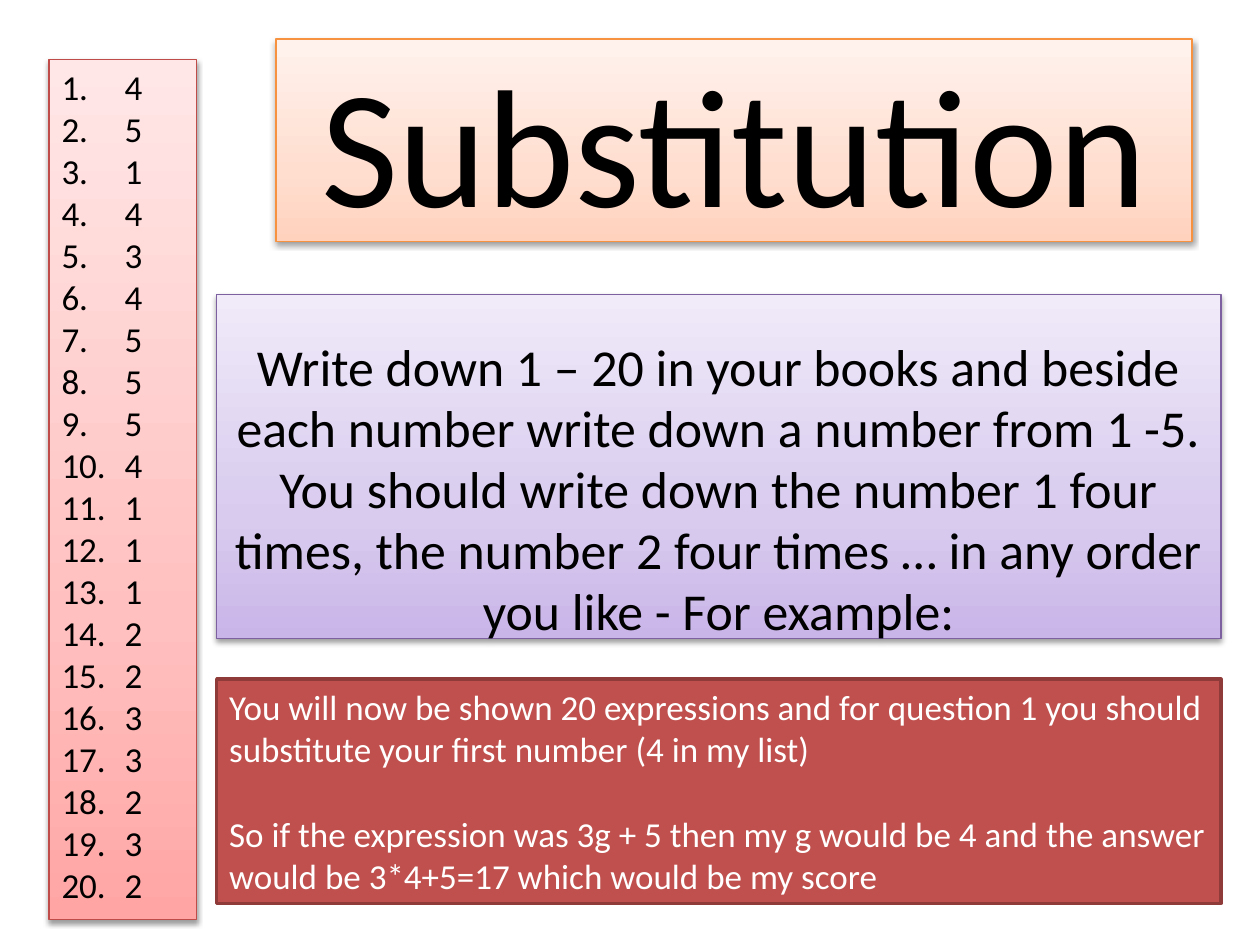
from copy import deepcopy

from lxml import etree
from pptx import Presentation
from pptx import util as u
from pptx.dml.color import RGBColor
from pptx.enum import shapes, text
from pptx.oxml import parse_xml
from pptx.oxml.ns import nsdecls, qn

BLACK = RGBColor(0x00, 0x00, 0x00)
WHITE = RGBColor(0xFF, 0xFF, 0xFF)
RED = RGBColor(0xC0, 0x50, 0x4D)
RED_EDGE = RGBColor(0x8E, 0x3B, 0x39)
ORANGE_EDGE = RGBColor(0xF6, 0x92, 0x40)
PURPLE_EDGE = RGBColor(0x7D, 0x60, 0xA0)
PINK_EDGE = RGBColor(0xBF, 0x4C, 0x48)
ORANGES = RGBColor(0xFF, 0xD2, 0xBD), RGBColor(0xFF, 0xDE, 0xD0), RGBColor(0xFF, 0xF2, 0xED)
PURPLES = RGBColor(0xC9, 0xB5, 0xE8), RGBColor(0xD8, 0xCB, 0xEE), RGBColor(0xF0, 0xEA, 0xF9)
PINKS = RGBColor(0xFF, 0xA6, 0xA5), RGBColor(0xFF, 0xC0, 0xBF), RGBColor(0xFF, 0xE7, 0xE7)

SHADOW = f"""<a:effectLst {nsdecls("a")}>
  <a:outerShdw blurRad="40000" dist="20000" dir="5400000" rotWithShape="0">
    <a:srgbClr val="000000"><a:alpha val="38000"/></a:srgbClr>
  </a:outerShdw>
</a:effectLst>"""


def add_panel(left, top, width, height, edge, edge_width, lines, size, color, align):
    """Add an outlined rectangle with one paragraph per line of text."""
    panel = slide.shapes.add_shape(
        shapes.MSO_SHAPE.RECTANGLE,
        u.Inches(left), u.Inches(top), u.Inches(width), u.Inches(height))
    panel.shadow.inherit = False
    panel.line.color.rgb = edge
    panel.line.width = u.Pt(edge_width)
    frame = panel.text_frame
    frame.word_wrap = True
    frame.vertical_anchor = text.MSO_ANCHOR.TOP
    frame.text = "\n".join(lines)
    for para in frame.paragraphs:
        para.alignment = align
        para.font.name = "Calibri"
        para.font.size = u.Pt(size)
        para.font.color.rgb = color
    return panel


def shade(panel, colors):
    """Fill from bottom to top with three colours and add a soft shadow below."""
    panel.fill.gradient()
    panel.fill.gradient_angle = 90
    stop_list = panel.element.spPr.find(".//" + qn("a:gsLst"))
    stop_list.insert(1, deepcopy(stop_list[0]))
    for stop, color, position in zip(panel.fill.gradient_stops, colors, (0, 0.35, 1)):
        stop.color.rgb = color
        stop.position = position
    properties = panel.element.spPr
    properties.replace(properties.find(qn("a:effectLst")), parse_xml(SHADOW))


deck = Presentation()
deck.slide_width, deck.slide_height = u.Inches(10), u.Inches(7.5)
slide = deck.slides.add_slide(deck.slide_layouts[6])

title = add_panel(2.19, 0.31, 7.27, 1.61, ORANGE_EDGE, 0.75,
                  ["Substitution"], 96, BLACK, text.PP_ALIGN.CENTER)
title.text_frame.vertical_anchor = text.MSO_ANCHOR.MIDDLE
shade(title, ORANGES)

task = add_panel(
    1.72, 2.34, 7.97, 2.73, PURPLE_EDGE, 0.75,
    ["Write down 1 – 20 in your books and beside each number write down a number "
     "from 1 -5. You should write down the number 1 four times, the number 2 four "
     "times … in any order you like - For example:"],
    29.6, BLACK, text.PP_ALIGN.CENTER)
task.text_frame.margin_top = u.Inches(0.34)
task.text_frame.paragraphs[0].line_spacing = 0.98
shade(task, PURPLES)

numbers = add_panel(0.39, 0.47, 1.17, 6.83, PINK_EDGE, 0.75,
                    "45143455541112233232", 20, BLACK, text.PP_ALIGN.LEFT)
numbers.text_frame.auto_size = text.MSO_AUTO_SIZE.SHAPE_TO_FIT_TEXT
for para in numbers.text_frame.paragraphs:
    settings = para._p.get_or_add_pPr()
    settings.set("marL", str(u.Inches(0.5)))
    settings.set("indent", str(-u.Inches(0.5)))
    numbering = etree.Element(qn("a:buAutoNum"), type="arabicPeriod")
    settings.insert(0, numbering)
shade(numbers, PINKS)

scoring = add_panel(
    1.72, 5.39, 7.97, 1.78, RED_EDGE, 2,
    ["You will now be shown 20 expressions and for question 1 you should substitute "
     "your first number (4 in my list)",
     "So if the expression was 3g + 5 then my g would be 4 and the answer would be "
     "3*4+5=17 which would be my score"],
    20, WHITE, text.PP_ALIGN.LEFT)
scoring.text_frame.auto_size = text.MSO_AUTO_SIZE.SHAPE_TO_FIT_TEXT
scoring.text_frame.paragraphs[1].space_before = u.Pt(24.4)
scoring.fill.solid()
scoring.fill.fore_color.rgb = RED

deck.save("out.pptx")
